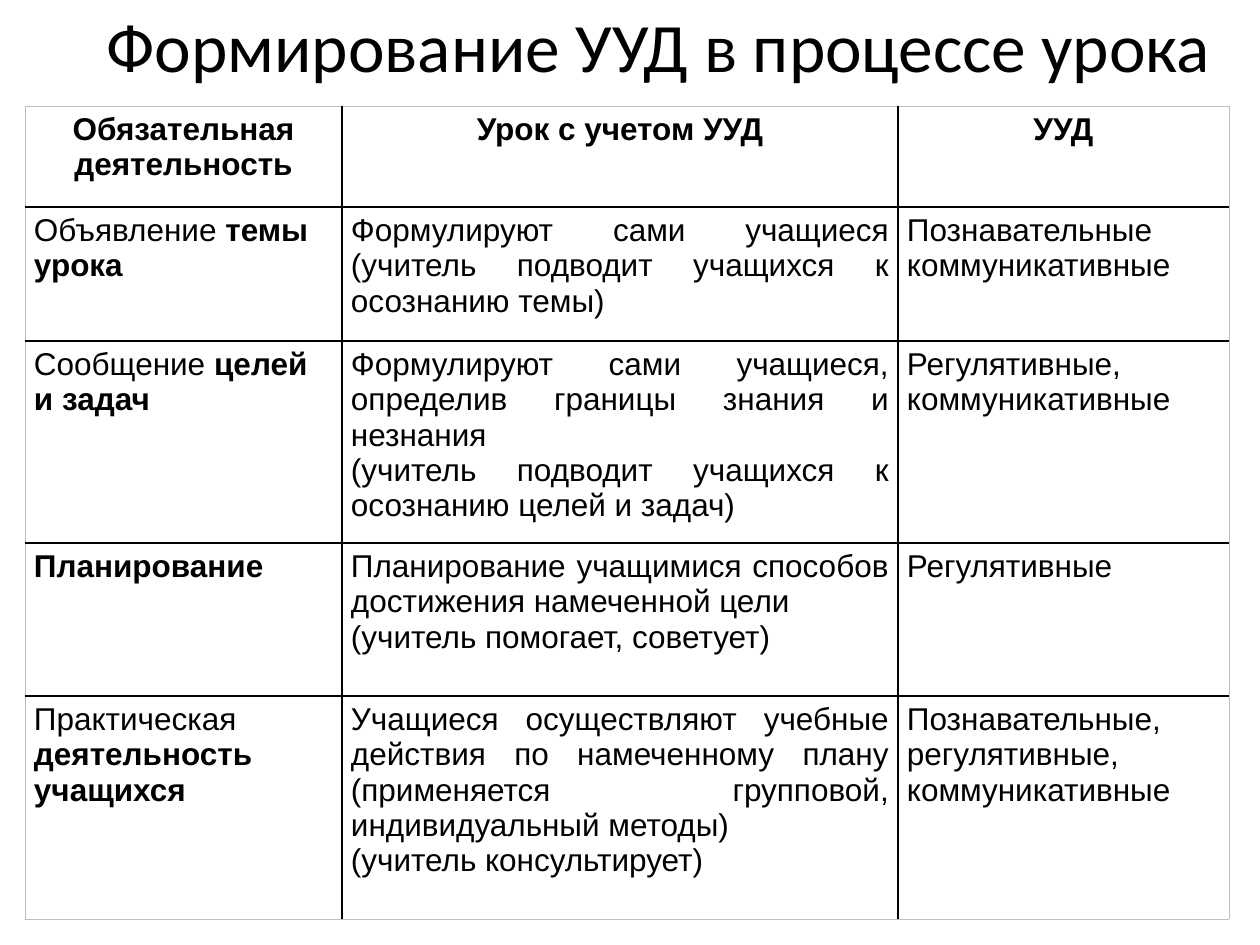
from lxml.etree import SubElement
from pptx import Presentation
from pptx.dml.color import RGBColor
from pptx.enum.text import MSO_ANCHOR, MSO_AUTO_SIZE, PP_ALIGN
from pptx.oxml.ns import qn
from pptx.util import Emu, Pt

SCALE = 914400 / 126
BLACK, WHITE, GREY = "000000", "FFFFFF", "BFBFBF"
COLS = [317, 556, 331]
ROWS = [101, 134, 202, 153, 223]
ALIGNS = [PP_ALIGN.LEFT, PP_ALIGN.JUSTIFY, PP_ALIGN.LEFT]

# Each cell is a list of paragraphs, each paragraph a list of (text, bold) runs.
CELLS = [
    [[[("Обязательная деятельность", True)]],
     [[("Урок с учетом УУД", True)]],
     [[("УУД", True)]]],
    [[[("Объявление ", False), ("темы урока", True)]],
     [[("Формулируют сами учащиеся (учитель подводит учащихся к осознанию темы)", False)]],
     [[("Познавательные коммуникативные", False)]]],
    [[[("Сообщение ", False), ("целей и задач", True)]],
     [[("Формулируют сами учащиеся, определив границы знания и незнания", False)],
      [("(учитель подводит учащихся к осознанию целей и задач)", False)]],
     [[("Регулятивные, коммуникативные", False)]]],
    [[[("Планирование", True)]],
     [[("Планирование учащимися способов достижения намеченной цели", False)],
      [("(учитель помогает, советует)", False)]],
     [[("Регулятивные", False)]]],
    [[[("Практическая ", False), ("деятельность учащихся", True)]],
     [[("Учащиеся осуществляют учебные действия по намеченному плану "
        "(применяется групповой, индивидуальный методы)", False)],
      [("(учитель консультирует)", False)]],
     [[("Познавательные, регулятивные, коммуникативные", False)]]],
]


def px(size):
    return Emu(round(size * SCALE))


def color(code):
    return RGBColor.from_string(code)


def add_run(para, text, face, size, bold=False):
    run = para.add_run()
    run.text = text
    font = run.font
    font.name, font.size, font.bold = face, Pt(size), bold
    font.color.rgb = color(BLACK)


def add_title(slide, left, top, width, height):
    title = slide.shapes.title
    title.left, title.top = px(left), px(top)
    title.width, title.height = px(width), px(height)
    frame = title.text_frame
    frame.word_wrap = True
    frame.auto_size = MSO_AUTO_SIZE.NONE
    frame.vertical_anchor = MSO_ANCHOR.MIDDLE
    para = frame.paragraphs[0]
    para.alignment = PP_ALIGN.CENTER
    add_run(para, "Формирование УУД в процессе урока", "Calibri", 39.6)


def set_edges(cell, row, col):
    outer = {
        "a:lnL": col == 0,
        "a:lnR": col == len(COLS) - 1,
        "a:lnT": row == 0,
        "a:lnB": row == len(ROWS) - 1,
    }
    props = cell._tc.get_or_add_tcPr()
    for tag, rim in outer.items():
        line = SubElement(props, qn(tag), w=str(Pt(0.5 if rim else 1)))
        fill = SubElement(line, qn("a:solidFill"))
        SubElement(fill, qn("a:srgbClr"), val=GREY if rim else BLACK)


def fill_cell(cell, paras, align):
    cell.fill.solid()
    cell.fill.fore_color.rgb = color(WHITE)
    cell.margin_left = cell.margin_right = px(9)
    cell.margin_top = cell.margin_bottom = px(6)
    cell.vertical_anchor = MSO_ANCHOR.TOP
    frame = cell.text_frame
    for num, runs in enumerate(paras):
        para = frame.add_paragraph() if num else frame.paragraphs[0]
        para.alignment = align
        for text, bold in runs:
            add_run(para, text, "Arial", 18, bold)


def add_grid(slide, left, top, width, height):
    table = slide.shapes.add_table(
        len(ROWS), len(COLS), px(left), px(top), px(width), px(height)).table
    table.first_row = table.horz_banding = False
    for col, size in zip(table.columns, COLS):
        col.width = px(size)
    for row, size in zip(table.rows, ROWS):
        row.height = px(size)
    for row, line in enumerate(CELLS):
        for col, paras in enumerate(line):
            cell = table.cell(row, col)
            set_edges(cell, row, col)
            fill_cell(cell, paras, ALIGNS[col] if row else PP_ALIGN.CENTER)


def main():
    deck = Presentation()
    deck.slide_width, deck.slide_height = px(1260), px(945)
    slide = deck.slides.add_slide(deck.slide_layouts[5])
    add_title(slide, 82, 14, 1153, 62)
    add_grid(slide, 25, 106, sum(COLS), sum(ROWS))
    deck.save("out.pptx")


if __name__ == "__main__":
    main()
